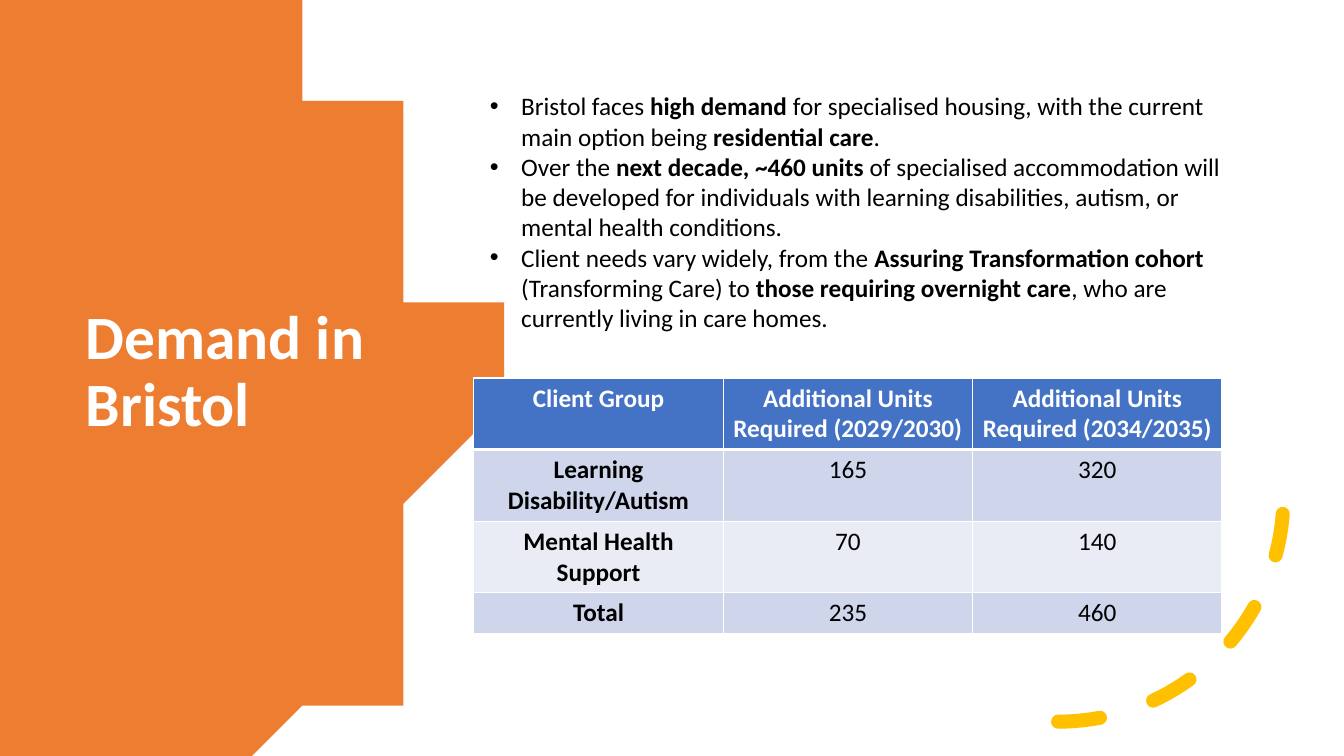
from math import asin, cos, sin
from lxml.etree import SubElement
from pptx import Presentation
from pptx.dml.color import RGBColor
from pptx.enum.dml import MSO_LINE
from pptx.enum.shapes import MSO_SHAPE
from pptx.enum.text import MSO_ANCHOR, MSO_AUTO_SIZE, PP_ALIGN
from pptx.oxml.ns import qn
from pptx.util import Inches, Pt

HUES = {
    "orange": "ED7D31", "gold": "FFC000", "blue": "4472C4", "pale": "CFD5EA",
    "mist": "E9EBF5", "white": "FFFFFF", "black": "000000",
}


def hue(name):
    return RGBColor.from_string(HUES[name])


def style(run, size, color, bold):
    looks = {"name": "Calibri", "size": Pt(size), "bold": bold}
    for key, value in looks.items():
        setattr(run.font, key, value)
    run.font.color.rgb = hue(color)


deck = Presentation()
deck.slide_width, deck.slide_height = Inches(13.33), Inches(7.5)
slide = deck.slides.add_slide(deck.slide_layouts[1])
shapes = slide.shapes
title, body = shapes.title, slide.placeholders[1]

mid, left, radius, steps = 3.75, 0.15, 4.41, 80
sweep = asin(mid / radius)
turns = [sweep * (2 * i / steps - 1) for i in range(steps + 1)]
curve = [(left + radius * cos(t), mid + radius * sin(t)) for t in turns]
pen = shapes.build_freeform(0, 0, scale=Inches(1))
pen.add_line_segments(curve + [(0, 7.5)], close=True)
disc = pen.convert_to_shape()
disc.shadow.inherit = False
disc.fill.solid()
disc.fill.fore_color.rgb = hue("orange")
disc.line.fill.background()
title.element.addprevious(disc.element)

places = [(title, (0.75, 1.26, 3.5, 4.88)), (body, (4.76, 0.85, 7.67, 2.52))]
for shape, box in places:
    for key, value in zip(("left", "top", "width", "height"), box):
        setattr(shape, key, Inches(value))

frame = title.text_frame
frame.auto_size = MSO_AUTO_SIZE.NONE
frame.vertical_anchor = MSO_ANCHOR.MIDDLE
head = frame.paragraphs[0]
head.alignment, head.line_spacing = PP_ALIGN.LEFT, 0.9
run = head.add_run()
run.text = "Demand in Bristol"
style(run, 44, "white", True)

arc = shapes.add_shape(MSO_SHAPE.ARC, Inches(8.26), Inches(2.69), Inches(4.47), Inches(4.47))
arc.shadow.inherit = False
arc.fill.background()
arc.line.color.rgb = hue("gold")
arc.line.width = Pt(10)
arc.line.dash_style = MSO_LINE.DASH
arc.element.spPr.find(qn("a:ln")).set("cap", "rnd")
arc.element.spPr.find(qn("a:xfrm")).set("flipV", "1")

rows = [
    ("Client Group", "Additional Units Required (2029/2030)", "Additional Units Required (2034/2035)"),
    ("Learning Disability/Autism", "165", "320"),
    ("Mental Health Support", "70", "140"),
    ("Total", "235", "460"),
]
fills = ["blue", "pale", "mist", "pale"]
heights = [0.7, 0.7, 0.7, 0.4]
holder = shapes.add_table(4, 3, Inches(4.7), Inches(3.75), Inches(7.42), Inches(2.5))
grid = holder.table
for col in grid.columns:
    col.width = Inches(7.42 / 3)
for r, row in enumerate(rows):
    grid.rows[r].height = Inches(heights[r])
    for c, text in enumerate(row):
        cell = grid.cell(r, c)
        para = cell.text_frame.paragraphs[0]
        para.alignment = PP_ALIGN.CENTER
        run = para.add_run()
        run.text = text
        style(run, 18, "white" if r == 0 else "black", r == 0 or c == 0)
        props = cell._tc.get_or_add_tcPr()
        widths = {"L": 1, "R": 1, "T": 3 if r == 1 else 1, "B": 3 if r == 0 else 1}
        for side, width in widths.items():
            edge = SubElement(props, qn("a:ln" + side), w=str(Pt(width)))
            paint = SubElement(edge, qn("a:solidFill"))
            SubElement(paint, qn("a:srgbClr"), val=HUES["white"])
        cell.fill.solid()
        cell.fill.fore_color.rgb = hue(fills[r])

points = [
    [("Bristol faces ", False), ("high demand ", True),
     ("for specialised housing, with the current main option being ", False),
     ("residential care", True), (".", False)],
    [("Over the ", False), ("next decade, ~460 units ", True),
     ("of specialised accommodation will be developed for individuals with "
      "learning disabilities, autism, or mental health conditions.", False)],
    [("Client needs vary widely, from the ", False),
     ("Assuring Transformation cohort ", True), ("(Transforming Care) to ", False),
     ("those requiring overnight care", True),
     (", who are currently living in care homes.", False)],
]
holder.element.addnext(body.element)
frame = body.text_frame
frame.word_wrap = True
frame.auto_size = MSO_AUTO_SIZE.SHAPE_TO_FIT_TEXT
frame.vertical_anchor = MSO_ANCHOR.TOP
looks = {"alignment": PP_ALIGN.LEFT, "line_spacing": 1.0, "space_before": Pt(0), "space_after": Pt(0)}
for i, point in enumerate(points):
    para = frame.add_paragraph() if i else frame.paragraphs[0]
    for key, value in looks.items():
        setattr(para, key, value)
    props = para._p.get_or_add_pPr()
    props.set("marL", str(Inches(0.31)))
    props.set("indent", str(-Inches(0.31)))
    SubElement(props, qn("a:buFont"), typeface="Arial")
    SubElement(props, qn("a:buChar"), char="•")
    for text, bold in point:
        run = para.add_run()
        run.text = text
        style(run, 18, "black", bold)

deck.save("out.pptx")
